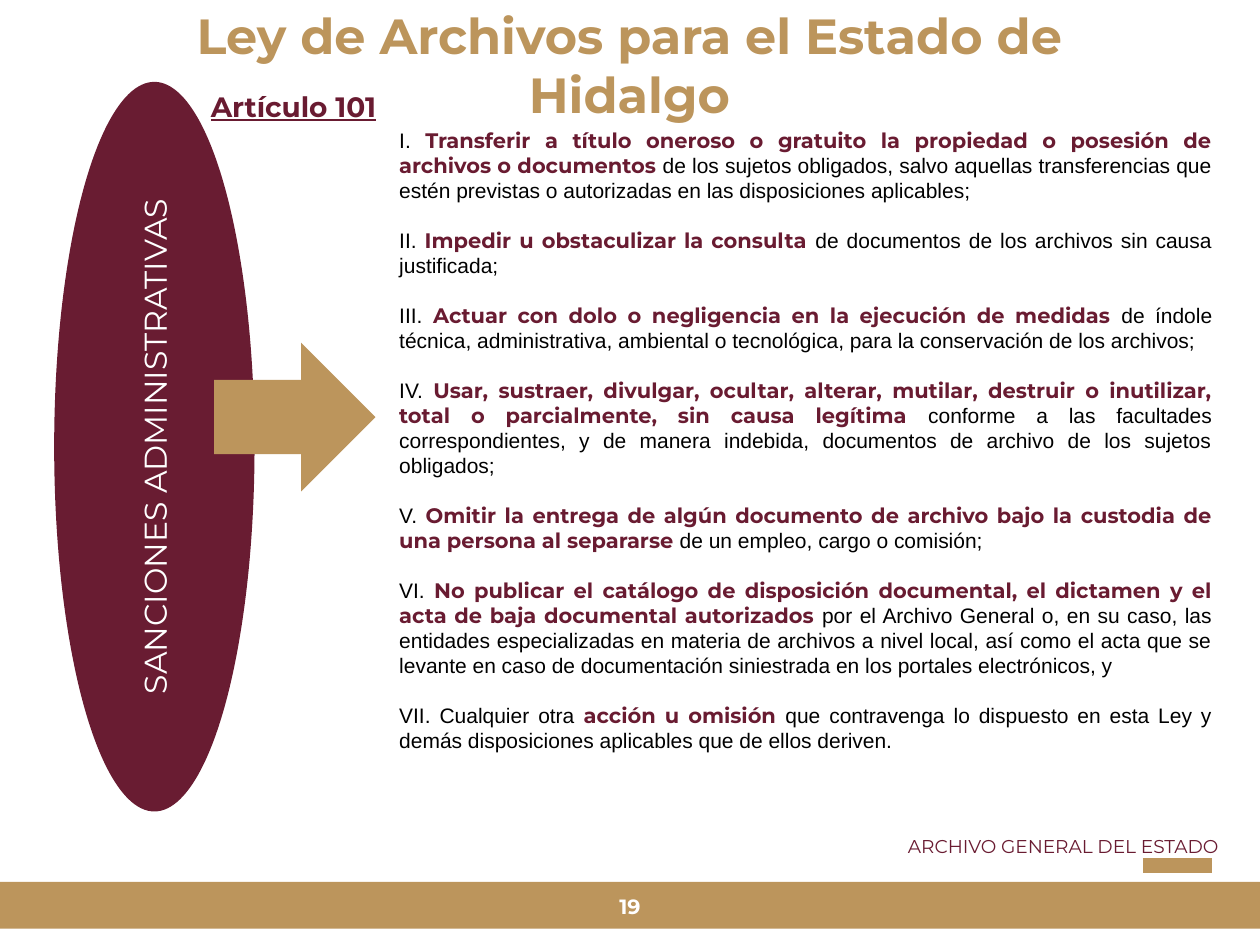
from dataclasses import dataclass
from typing import NamedTuple

from pptx import Presentation
from pptx.dml.color import RGBColor
from pptx.enum.shapes import MSO_CONNECTOR as Connector, MSO_SHAPE as Shape
from pptx.enum.text import MSO_ANCHOR as Anchor, MSO_AUTO_SIZE as AutoSize, PP_ALIGN as Align
from pptx.oxml.ns import qn
from pptx.util import Inches, Pt
from lxml.etree import SubElement

COLORS = {"gold": "BC955C", "wine": "691B31", "oval": "691C32", "white": "FFFFFF", "black": "000000"}
DISPLAY, BODY = "Montserrat", "Arial"
COLUMNS, ROWS = 100, 75


class Area(NamedTuple):
    col: float
    row: float
    cols: float
    rows: float


class Clause(NamedTuple):
    numeral: str
    conduct: str
    detail: str


@dataclass
class Style:
    size: float
    color: str
    bold: bool = False
    underline: bool = False
    align: Align = Align.CENTER
    anchor: Anchor = Anchor.TOP
    insets: tuple[float, float] = (0.1, 0.05)
    spacing: float = 1.0


CLAUSES = [
    Clause("I. ", "Transferir a título oneroso o gratuito la propiedad o posesión de archivos o documentos ",
           "de los sujetos obligados, salvo aquellas transferencias que estén previstas o autorizadas "
           "en las disposiciones aplicables;"),
    Clause("II. ", "Impedir u obstaculizar la consulta ",
           "de documentos de los archivos sin causa justificada;"),
    Clause("III. ", "Actuar con dolo o negligencia en la ejecución de medidas ",
           "de índole técnica, administrativa, ambiental o tecnológica, para la conservación de los archivos;"),
    Clause("IV. ", "Usar, sustraer, divulgar, ocultar, alterar, mutilar, destruir o inutilizar, "
           "total o parcialmente, sin causa legítima ",
           "conforme a las facultades correspondientes, y de manera indebida, documentos de archivo "
           "de los sujetos obligados;"),
    Clause("V. ", "Omitir la entrega de algún documento de archivo bajo la custodia de una persona al separarse ",
           "de un empleo, cargo o comisión;"),
    Clause("VI. ", "No publicar el catálogo de disposición documental, el dictamen y el acta de baja "
           "documental autorizados ",
           "por el Archivo General o, en su caso, las entidades especializadas en materia de archivos "
           "a nivel local, así como el acta que se levante en caso de documentación siniestrada "
           "en los portales electrónicos, y"),
    Clause("VII. Cualquier otra ", "acción u omisión ",
           "que contravenga lo dispuesto en esta Ley y demás disposiciones aplicables que de ellos deriven."),
]

deck = Presentation()
deck.slide_width, deck.slide_height = Inches(10), Inches(7.5)
slide = deck.slides.add_slide(deck.slide_layouts[5])


def x(col: float) -> int:
    return round(deck.slide_width * col / COLUMNS)


def y(row: float) -> int:
    return round(deck.slide_height * row / ROWS)


def emu(area: Area) -> tuple[int, int, int, int]:
    return x(area.col), y(area.row), x(area.cols), y(area.rows)


def rgb(color: str) -> RGBColor:
    return RGBColor.from_string(COLORS[color])


def set_font(font, family: str, size: float, color: str, bold: bool = False) -> None:
    font.name, font.size, font.bold = family, Pt(size), bold
    font.color.rgb = rgb(color)


def write(holder, text: str, style: Style) -> None:
    frame = holder.text_frame
    frame.word_wrap, frame.auto_size = True, AutoSize.NONE
    frame.vertical_anchor = style.anchor
    frame.margin_left = frame.margin_right = Inches(style.insets[0])
    frame.margin_top = frame.margin_bottom = Inches(style.insets[1])
    frame.text = text
    paragraph = frame.paragraphs[0]
    paragraph.alignment, paragraph.line_spacing = style.align, style.spacing
    set_font(paragraph.font, DISPLAY, style.size, style.color, style.bold)
    paragraph.font.underline = style.underline


def add_label(area: Area, text: str, style: Style) -> None:
    write(slide.shapes.add_textbox(*emu(area)), text, style)


def add_block(kind: Shape, area: Area, color: str):
    block = slide.shapes.add_shape(kind, *emu(area))
    block.shadow.inherit = False
    block.fill.solid()
    block.fill.fore_color.rgb = rgb(color)
    block.line.fill.background()
    return block


def add_rule(start: float, end: float, row: float, color: str, weight: float) -> None:
    rule = slide.shapes.add_connector(Connector.STRAIGHT, x(start), y(row), x(end), y(row))
    rule.line.color.rgb, rule.line.width = rgb(color), Pt(weight)
    SubElement(rule._element.spPr, qn("a:effectLst"))


def add_clauses(area: Area, clauses: list[Clause]) -> None:
    frame = slide.shapes.add_textbox(*emu(area)).text_frame
    frame.word_wrap = True
    for index, clause in enumerate(clauses):
        paragraph = frame.add_paragraph() if index else frame.paragraphs[0]
        paragraph.alignment = Align.JUSTIFY
        paragraph.space_after = Pt(14)
        for part in clause:
            run = paragraph.add_run()
            run.text = part
            if part == clause.conduct:
                set_font(run.font, DISPLAY, 12, "wine", True)
            else:
                set_font(run.font, BODY, 12, "black")


title = slide.shapes.title
title.left, title.top, title.width, title.height = emu(Area(7.7, 0, 84.5, 5.7))
write(title, "Ley de Archivos para el Estado de Hidalgo",
      Style(28.2, "gold", bold=True, insets=(0.09, 0.04)))

add_block(Shape.RECTANGLE, Area(-0.2, 70, 100.6, 3.7), "gold")
add_label(Area(47.6, 70.2, 4.8, 3.7), "19",
          Style(11.8, "white", bold=True, anchor=Anchor.MIDDLE, insets=(0.1, 0.1), spacing=0.9))
add_label(Area(46.8, 65.9, 50.5, 2.8), "ARCHIVO GENERAL DEL ESTADO",
          Style(10.6, "wine", align=Align.RIGHT, insets=(0.06, 0.06), spacing=0.9))
add_rule(90.7, 96.2, 68.7, "gold", 9)

sanctions = add_block(Shape.OVAL, Area(4.3, 6.5, 15.9, 57.9), "oval")
write(sanctions, "SANCIONES ADMINISTRATIVAS",
      Style(18, "white", anchor=Anchor.MIDDLE, insets=(0.08, 0.04)))
sanctions.text_frame._txBody.bodyPr.set("vert", "vert270")
add_block(Shape.RIGHT_ARROW, Area(17, 27.2, 12.8, 11.8), "gold")

add_clauses(Area(30.7, 9.6, 66.5, 49.5), CLAUSES)
add_label(Area(12.8, 6.6, 21, 3.7), "Artículo 101", Style(16, "wine", bold=True, underline=True))

deck.save("out.pptx")
